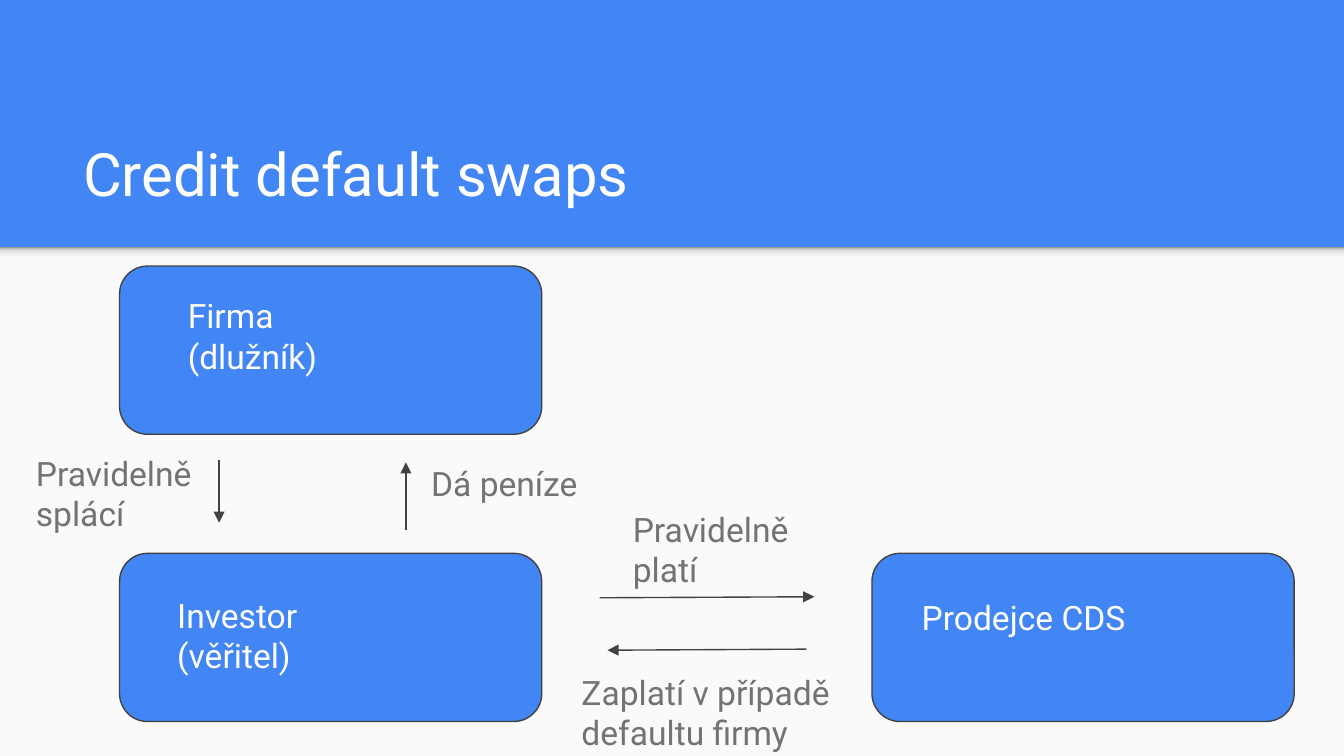
from copy import deepcopy

from lxml import etree
from pptx import Presentation
from pptx.dml.color import RGBColor
from pptx.enum import shapes, text
from pptx.oxml import ns
from pptx.util import Cm, Pt

BLUE = RGBColor(0x42, 0x85, 0xF4)
PAPER = RGBColor(0xFA, 0xFA, 0xFA)
DARK = RGBColor(0x42, 0x42, 0x42)
GREY = RGBColor(0x73, 0x73, 0x73)
WHITE = RGBColor(0xFF, 0xFF, 0xFF)
SHADE_STOPS = [(0, "F9F9F9"), (36, "F9F9F9"), (80, "DEDEDE"), (100, "999999")]

WIDTH, HEIGHT, HEADER = 25.4, 14.29, 4.67
NODE_WIDTH, NODE_HEIGHT = 7.98, 3.18
LEFT_COLUMN, RIGHT_COLUMN = 2.26, 16.48
TOP_ROW, BOTTOM_ROW = 5.03, 10.46


def write_text(shape, lines, size=18, color=GREY, anchor=text.MSO_ANCHOR.TOP):
    frame = shape.text_frame
    frame.word_wrap = True
    frame.auto_size = text.MSO_AUTO_SIZE.NONE
    frame.vertical_anchor = anchor
    frame.margin_left = frame.margin_right = Cm(0.25)
    frame.margin_top = frame.margin_bottom = Cm(0.25)
    frame.text = "\n".join(lines)
    for paragraph in frame.paragraphs:
        paragraph.alignment = text.PP_ALIGN.LEFT
        for run in paragraph.runs:
            run.font.name = "Roboto"
            run.font.size = Pt(size)
            run.font.color.rgb = color


def add_label(slide, box, lines, **style):
    write_text(slide.shapes.add_textbox(*map(Cm, box)), lines, **style)


def add_block(slide, kind, box):
    shape = slide.shapes.add_shape(kind, *map(Cm, box))
    shape.shadow.inherit = False
    shape.line.fill.background()
    return shape


def add_arrow(slide, start, end):
    arrow = slide.shapes.add_connector(
        shapes.MSO_CONNECTOR.STRAIGHT, *map(Cm, (*start, *end)))
    arrow.line.color.rgb = DARK
    arrow.line.width = Pt(0.75)
    etree.SubElement(arrow.line._get_or_add_ln(), ns.qn("a:tailEnd"), type="triangle")
    etree.SubElement(arrow._element.spPr, ns.qn("a:effectLst"))


def add_header(slide, box, title):
    left, top, width, height = box
    slide.background.fill.solid()
    slide.background.fill.fore_color.rgb = BLUE
    shape = slide.shapes.title
    shape.left, shape.top = Cm(left + 1.32), Cm(top + 2.06)
    shape.width, shape.height = Cm(width - 2.57), Cm(height - 2.54)
    write_text(shape, [title], size=32, color=WHITE, anchor=text.MSO_ANCHOR.BOTTOM)


def add_body_panel(slide, box):
    left, top, width, _ = box
    panel = add_block(slide, shapes.MSO_SHAPE.RECTANGLE, box)
    panel.fill.solid()
    panel.fill.fore_color.rgb = PAPER

    # Soft shade below the header, darkest at its top edge
    shade = add_block(slide, shapes.MSO_SHAPE.RECTANGLE, (left, top, width, 0.3))
    shade.fill.gradient()
    shade.fill.gradient_angle = 90
    stops = shade._element.spPr.find(".//" + ns.qn("a:gsLst"))
    template = deepcopy(stops[0])
    for stop in list(stops):
        stops.remove(stop)
    for position, color in SHADE_STOPS:
        stop = deepcopy(template)
        stop.set("pos", str(position * 1000))
        for child in list(stop):
            stop.remove(child)
        etree.SubElement(stop, ns.qn("a:srgbClr"), val=color)
        stops.append(stop)


def add_node(slide, box, lines, offset):
    """Draw one party, with its name at the offset inside the box."""
    left, top, width, _ = box
    node = add_block(slide, shapes.MSO_SHAPE.ROUNDED_RECTANGLE, box)
    node.fill.solid()
    node.fill.fore_color.rgb = BLUE
    node.line.color.rgb = DARK
    node.line.width = Pt(0.75)
    add_label(slide, (left + offset[0], top + offset[1], width - 1.7, 1.6),
              lines, color=WHITE)


def add_flows(slide, origin, flows):
    """Draw labelled arrows, all measured from the region's top left corner."""
    left, top = origin
    for label, (x, y, width, height), start, end in flows:
        add_label(slide, (left + x, top + y, width, height), [label])
        add_arrow(slide, *((left + a, top + b) for a, b in (start, end)))


def main():
    presentation = Presentation()
    presentation.slide_width, presentation.slide_height = Cm(WIDTH), Cm(HEIGHT)
    slide = presentation.slides.add_slide(presentation.slide_layouts[5])

    add_header(slide, (0, 0, WIDTH, HEADER), "Credit default swaps")
    add_body_panel(slide, (0, HEADER, WIDTH, HEIGHT - HEADER))

    # Parties
    for left, top, lines, offset in [
        (LEFT_COLUMN, TOP_ROW, ["Firma", "(dlužník)"], (1.04, 0.3)),
        (LEFT_COLUMN, BOTTOM_ROW, ["Investor", "(věřitel)"], (0.84, 0.53)),
        (RIGHT_COLUMN, BOTTOM_ROW, ["Prodejce CDS"], (0.69, 0.58)),
    ]:
        add_node(slide, (left, top, NODE_WIDTH, NODE_HEIGHT), lines, offset)

    # Loan between company and investor
    add_flows(slide, (0.43, 8.31), [
        ("Pravidelně splácí", (0, 0, 3.48, 1.55), (3.71, 0.38), (3.71, 1.57)),
        ("Dá peníze", (7.47, 0.2, 4.39, 1.19), (7.24, 1.7), (7.24, 0.43)),
    ])

    # Swap between investor and seller
    add_flows(slide, (10.74, 9.37), [
        ("Pravidelně platí", (0.97, 0, 4.06, 0.79), (0.59, 1.93), (4.65, 1.91)),
        ("Zaplatí v případě defaultu firmy", (0, 3.08, 5.28, 1.19),
         (4.5, 2.9), (0.74, 2.92)),
    ])

    presentation.save("out.pptx")


if __name__ == "__main__":
    main()
